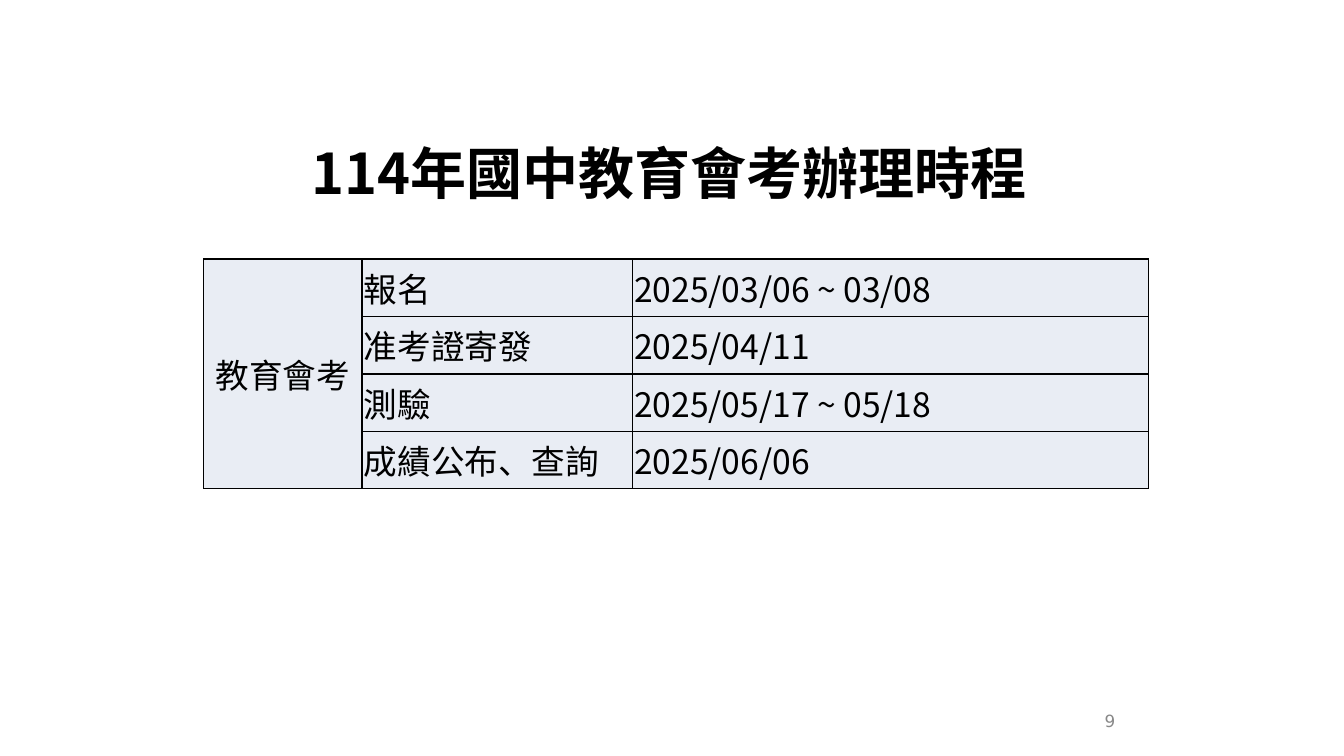
from lxml.etree import SubElement
from pptx import Presentation
from pptx.dml.color import RGBColor
from pptx.enum.text import MSO_ANCHOR, PP_ALIGN
from pptx.oxml import parse_xml
from pptx.oxml.ns import nsdecls, qn
from pptx.util import Inches, Pt

BLACK = RGBColor(0x00, 0x00, 0x00)
GREY = RGBColor(0x89, 0x89, 0x89)
PALE_BLUE = RGBColor(0xE9, 0xED, 0xF4)
CJK_FONT = "Noto Sans CJK SC"
NUMBER_FONT = "DejaVu Sans"

TITLE_FORMAT = {"size": Pt(40), "bold": True, "name": CJK_FONT}
CELL_FORMAT = {"size": Pt(24), "bold": False, "name": CJK_FONT}
NUMBER_FORMAT = {"size": Pt(12), "bold": False, "name": NUMBER_FONT}
CELL_LAYOUT = {
    "margin_left": Inches(0.02),
    "margin_right": Inches(0.02),
    "margin_top": 0,
    "margin_bottom": 0,
    "vertical_anchor": MSO_ANCHOR.MIDDLE,
}

EXAM = "教育會考"
SCHEDULE = [
    ("報名", "2025/03/06 ~ 03/08"),
    ("准考證寄發", "2025/04/11"),
    ("測驗", "2025/05/17 ~ 05/18"),
    ("成績公布、查詢", "2025/06/06"),
]
COLUMN_WIDTHS = (1.57, 2.68, 5.12)


def write(frame, text, font_format, color=BLACK, align=PP_ALIGN.LEFT):
    """Put one formatted run into a text frame and return it."""
    paragraph = frame.paragraphs[0]
    paragraph.alignment = align
    run = paragraph.add_run()
    run.text = text
    for key, value in font_format.items():
        setattr(run.font, key, value)
    run.font.color.rgb = color
    SubElement(run.font._element, qn("a:ea"), typeface=font_format["name"])
    return run


def add_heading(slide, left, top, width, height):
    """Place the title with its soft text shadow."""
    heading = slide.shapes.title
    box = {"left": left, "top": top, "width": width, "height": height}
    for key, value in box.items():
        setattr(heading, key, Inches(value))
    heading.text_frame.word_wrap = True
    heading.text_frame.vertical_anchor = MSO_ANCHOR.MIDDLE
    run = write(heading.text_frame, "114年國中教育會考辦理時程", TITLE_FORMAT, align=PP_ALIGN.CENTER)
    shadow = parse_xml(
        f'<a:effectLst {nsdecls("a")}><a:outerShdw blurRad="38100" dist="38100" dir="2700000" algn="tl">'
        '<a:srgbClr val="000000"><a:alpha val="43000"/></a:srgbClr></a:outerShdw></a:effectLst>'
    )
    run.font._element.find(qn("a:solidFill")).addnext(shadow)


def style_cell(cell):
    """Give a cell its layout, fill and thin black borders."""
    for key, value in CELL_LAYOUT.items():
        setattr(cell, key, value)
    cell.fill.solid()
    cell.fill.fore_color.rgb = PALE_BLUE
    properties = cell._tc.get_or_add_tcPr()
    for index, side in enumerate(("lnL", "lnR", "lnT", "lnB")):
        border = parse_xml(
            f'<a:{side} {nsdecls("a")} w="{Pt(1)}"><a:solidFill>'
            f'<a:srgbClr val="{BLACK}"/></a:solidFill></a:{side}>'
        )
        properties.insert(index, border)


def add_schedule(slide, left, top, width, height):
    """Place the timetable with the exam name spanning all rows."""
    row_count = len(SCHEDULE)
    schedule = slide.shapes.add_table(
        row_count, len(COLUMN_WIDTHS), Inches(left), Inches(top), Inches(width), Inches(height)
    ).table
    schedule.first_row = schedule.horz_banding = False
    for column, column_width in zip(schedule.columns, COLUMN_WIDTHS):
        column.width = Inches(column_width)
    for cell in schedule.iter_cells():
        style_cell(cell)
    exam_cell = schedule.cell(0, 0)
    exam_cell.merge(schedule.cell(row_count - 1, 0))
    write(exam_cell.text_frame, EXAM, CELL_FORMAT, align=PP_ALIGN.CENTER)
    for row, entry in enumerate(SCHEDULE):
        schedule.rows[row].height = Inches(height / row_count)
        for column, text in enumerate(entry, start=1):
            write(schedule.cell(row, column).text_frame, text, CELL_FORMAT)


def add_page_number(slide, left, top, width, height):
    """Place the page number at the lower right."""
    page_number = slide.shapes.add_textbox(Inches(left), Inches(top), Inches(width), Inches(height))
    page_number.text_frame.word_wrap = True
    page_number.text_frame.vertical_anchor = MSO_ANCHOR.MIDDLE
    write(page_number.text_frame, "9", NUMBER_FORMAT, GREY, PP_ALIGN.RIGHT)


def main():
    """Build the exam timetable slide."""
    presentation = Presentation()
    presentation.slide_width = Inches(13.33)
    presentation.slide_height = Inches(7.5)
    slide = presentation.slides.add_slide(presentation.slide_layouts[5])
    add_page_number(slide, 8.83, 6.95, 2.33, 0.4)
    add_schedule(slide, 2.02, 2.57, 9.37, 2.28)
    add_heading(slide, 1.94, 1.15, 9.39, 1.11)
    presentation.save("out.pptx")


if __name__ == "__main__":
    main()
